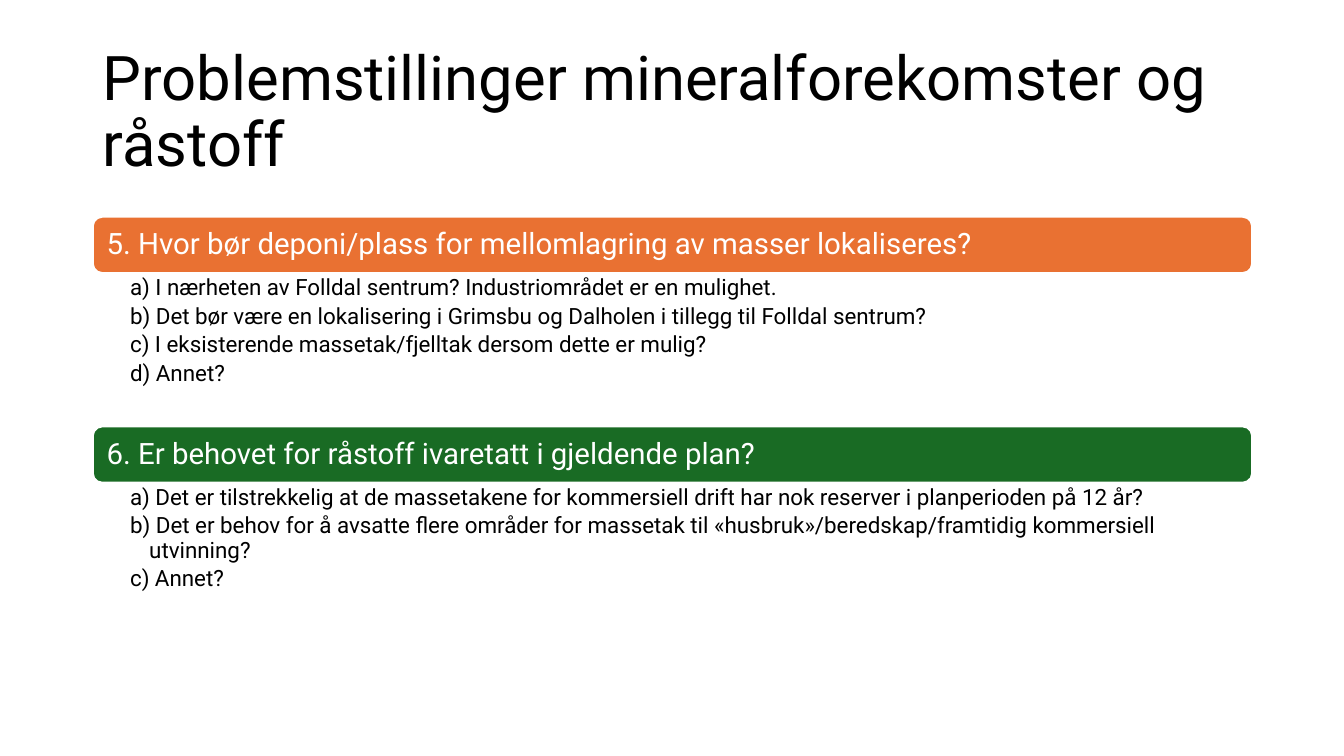
"""Build a slide with two coloured question bars and their lettered answers."""
import dataclasses

import lxml.etree
import pptx
import pptx.dml.color
import pptx.enum.shapes
import pptx.enum.text
import pptx.oxml.ns
import pptx.util

EMU_PER_PX = 9144


@dataclasses.dataclass(frozen=True)
class Theme:
    font: str = "Roboto"
    ink: str = "000000"
    paper: str = "FFFFFF"
    orange: str = "E97132"
    green: str = "196B24"
    title_size: int = 44
    question_size: int = 21
    answer_size: int = 16
    outline: float = 1.5
    line_spacing: float = 0.9
    answer_gap: float = 3.2


def px(length):
    return pptx.util.Emu(length * EMU_PER_PX)


def rgb(value):
    return pptx.dml.color.RGBColor.from_string(value)


class Page:
    def __init__(self, slide, theme):
        self.slide = slide
        self.theme = theme

    def set_text(self, shape, text, size, color, margins, anchor):
        frame = shape.text_frame
        frame.word_wrap = True
        frame.vertical_anchor = anchor
        frame.margin_left, frame.margin_top, frame.margin_right, frame.margin_bottom = map(px, margins)
        frame.text = text
        for para in frame.paragraphs:
            para.alignment = pptx.enum.text.PP_ALIGN.LEFT
            para.line_spacing = self.theme.line_spacing
            for span in para.runs:
                span.font.name = self.theme.font
                span.font.size = pptx.util.Pt(size)
                span.font.color.rgb = rgb(color)
        return frame.paragraphs

    def text_box(self, bounds, text, size, margins, anchor):
        box = self.slide.shapes.add_textbox(*map(px, bounds))
        return self.set_text(box, text, size, self.theme.ink, margins, anchor)

    def title(self, bounds, text):
        self.text_box(bounds, text, self.theme.title_size, (10, 5, 10, 5),
                      pptx.enum.text.MSO_ANCHOR.MIDDLE)

    def question_bar(self, bounds, text, color):
        bar = self.slide.shapes.add_shape(
            pptx.enum.shapes.MSO_SHAPE.ROUNDED_RECTANGLE, *map(px, bounds))
        bar.shadow.inherit = False
        bar.fill.solid()
        bar.fill.fore_color.rgb = rgb(color)
        bar.line.color.rgb = rgb(self.theme.paper)
        bar.line.width = pptx.util.Pt(self.theme.outline)
        self.set_text(bar, text, self.theme.question_size, self.theme.paper,
                      (11, 9, 11, 9), pptx.enum.text.MSO_ANCHOR.MIDDLE)

    def lettered_list(self, bounds, answers):
        text = "\n".join(f" {answer}" for answer in answers)
        paragraphs = self.text_box(bounds, text, self.theme.answer_size, (37, 3, 16, 3),
                                   pptx.enum.text.MSO_ANCHOR.TOP)
        for para in paragraphs:
            para.space_after = pptx.util.Pt(self.theme.answer_gap)
            properties = para._p.get_or_add_pPr()
            properties.set("marL", str(px(19)))
            properties.set("indent", str(px(-19)))
            lxml.etree.SubElement(properties, pptx.oxml.ns.qn("a:buAutoNum"), type="alphaLcParenR")


def main():
    theme = Theme()
    deck = pptx.Presentation()
    deck.slide_width, deck.slide_height = px(1333), px(750)
    page = Page(deck.slides.add_slide(deck.slide_layouts[6]), theme)

    left, width, bar_height = 92, 1150, 56
    page.title((left, 40, width, 145), "Problemstillinger mineralforekomster og råstoff")

    sections = [
        (215, 152, theme.orange,
         "5. Hvor bør deponi/plass for mellomlagring av masser lokaliseres?",
         ["I nærheten av Folldal sentrum? Industriområdet er en mulighet.",
          "Det bør være en lokalisering i Grimsbu og Dalholen i tillegg til Folldal sentrum?",
          "I eksisterende massetak/fjelltak dersom dette er mulig?",
          "Annet?"]),
        (423, 181, theme.green,
         "6. Er behovet for råstoff ivaretatt i gjeldende plan?",
         ["Det er tilstrekkelig at de massetakene for kommersiell drift har nok reserver "
          "i planperioden på 12 år?",
          "Det er behov for å avsatte flere områder for massetak til "
          "«husbruk»/beredskap/framtidig kommersiell utvinning?",
          "Annet?"]),
    ]
    for top, list_height, color, question, answers in sections:
        page.question_bar((left, top, width, bar_height), question, color)
        page.lettered_list((left, top + bar_height, width, list_height), answers)

    deck.save("out.pptx")


if __name__ == "__main__":
    main()
